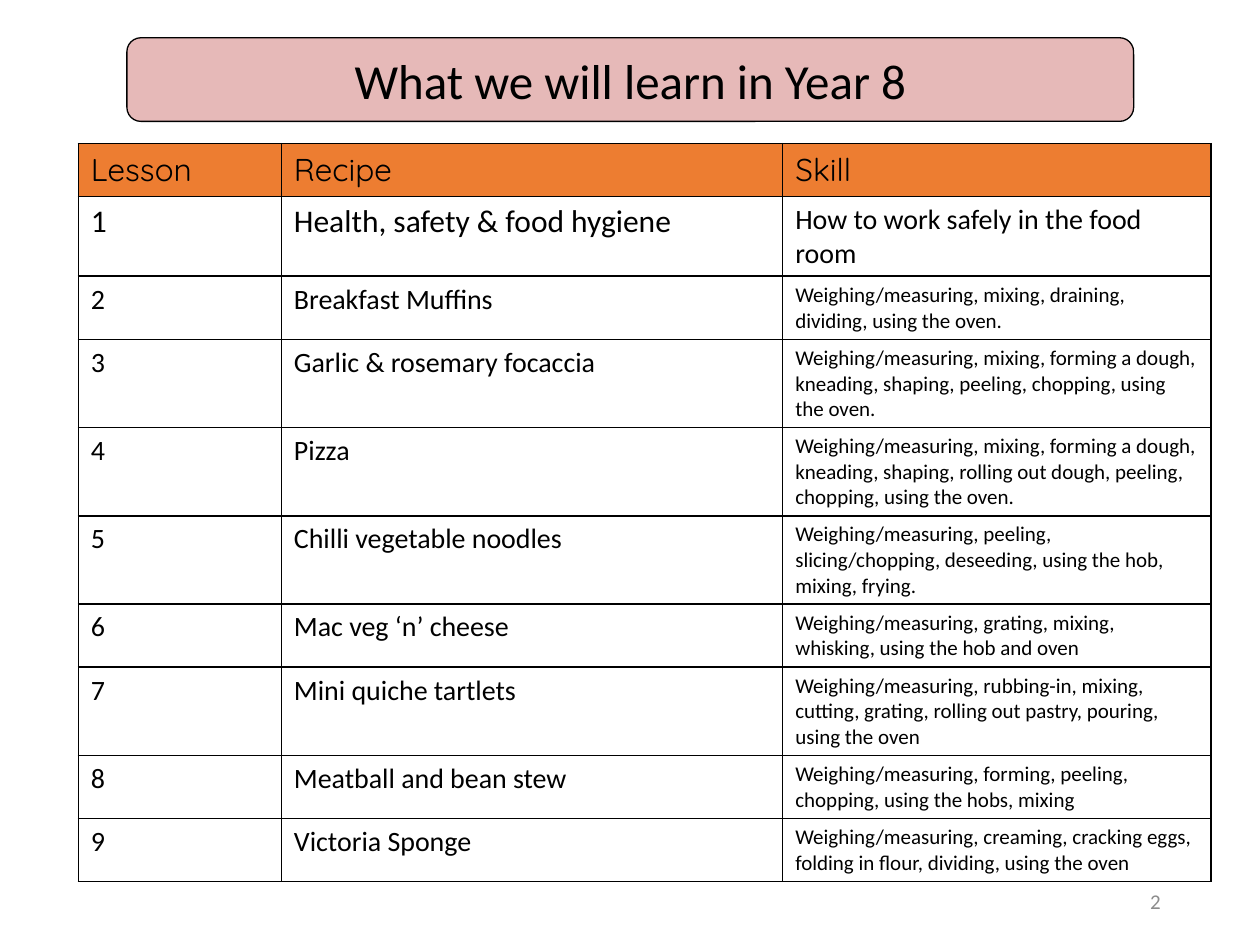
from typing import Any, NamedTuple

from lxml import etree
from pptx import Presentation
from pptx import util as u
from pptx.dml.color import RGBColor
from pptx.enum import shapes, text
from pptx.oxml import ns

COLOURS = {
    "ink": "000000",
    "title": "E6B9B8",
    "header": "ED7D31",
    "number": "8C8C8C",
}
BODY_FONT = "Calibri"
HEADER_FONT = "Quicksand"


class Lesson(NamedTuple):
    recipe: str
    skill: str
    size: int = 16
    skill_size: int = 12


class Box(NamedTuple):
    left: float
    top: float
    width: float
    height: float

    def lengths(self) -> list[u.Length]:
        return [u.Pt(value) for value in self]


HEADINGS = ("Lesson", "Recipe", "Skill")
COLUMN_WIDTHS = (116, 286.5, 244.8)
ROW_HEIGHT = 30.24
LESSONS = (
    Lesson("Health, safety & food hygiene", "How to work safely in the food room", 18, 16),
    Lesson("Breakfast Muffins", "Weighing/measuring, mixing, draining, dividing, using the oven."),
    Lesson("Garlic & rosemary focaccia",
           "Weighing/measuring, mixing, forming a dough, kneading, shaping, peeling, "
           "chopping, using the oven."),
    Lesson("Pizza",
           "Weighing/measuring, mixing, forming a dough, kneading, shaping, "
           "rolling out dough, peeling, chopping, using the oven."),
    Lesson("Chilli vegetable noodles",
           "Weighing/measuring, peeling, slicing/chopping, deseeding, using the hob, "
           "mixing, frying."),
    Lesson("Mac veg ‘n’ cheese",
           "Weighing/measuring, grating, mixing, whisking, using the hob and oven"),
    Lesson("Mini quiche tartlets",
           "Weighing/measuring, rubbing-in, mixing, cutting, grating, "
           "rolling out pastry, pouring, using the oven"),
    Lesson("Meatball and bean stew",
           "Weighing/measuring, forming, peeling, chopping, using the hobs, mixing"),
    Lesson("Victoria Sponge",
           "Weighing/measuring, creaming, cracking eggs, folding in flour, dividing, "
           "using the oven"),
)


def colour(name: str) -> RGBColor:
    return RGBColor.from_string(COLOURS[name])


def set_values(target: Any, values: dict[str, Any]) -> None:
    for name, value in values.items():
        setattr(target, name, value)


def write(frame: Any, words: str, size: float, font: str = BODY_FONT,
          ink: str = "ink", align: Any = text.PP_ALIGN.LEFT) -> None:
    para = frame.paragraphs[0]
    para.alignment = align
    span = para.add_run()
    span.text = words
    set_values(span.font, {"size": u.Pt(size), "name": font})
    span.font.color.rgb = colour(ink)


def add_borders(cell: Any) -> None:
    properties = cell._tc.get_or_add_tcPr()
    for side in ("lnL", "lnR", "lnT", "lnB"):
        line = etree.SubElement(properties, ns.qn(f"a:{side}"), w=str(u.Pt(1)))
        fill = etree.SubElement(line, ns.qn("a:solidFill"))
        etree.SubElement(fill, ns.qn("a:srgbClr"), val=COLOURS["ink"])


def add_title(page: Any, box: Box) -> None:
    title = page.shapes.add_shape(shapes.MSO_SHAPE.ROUNDED_RECTANGLE, *box.lengths())
    title.shadow.inherit = False
    title.fill.solid()
    title.fill.fore_color.rgb = colour("title")
    title.line.color.rgb = colour("ink")
    title.line.width = u.Pt(0.75)
    margins = ("margin_left", "margin_top", "margin_right", "margin_bottom")
    set_values(title.text_frame, dict.fromkeys(margins, u.Pt(3)))
    set_values(title.text_frame,
               {"word_wrap": True, "vertical_anchor": text.MSO_ANCHOR.MIDDLE})
    write(title.text_frame, "What we will learn in Year 8", 28, align=text.PP_ALIGN.CENTER)


def add_lessons(page: Any, left: float, top: float) -> None:
    row_count = len(LESSONS) + 1
    box = Box(left, top, sum(COLUMN_WIDTHS), row_count * ROW_HEIGHT)
    table = page.shapes.add_table(row_count, len(HEADINGS), *box.lengths()).table
    set_values(table, {"first_row": False, "horz_banding": False})
    for column, width in zip(table.columns, COLUMN_WIDTHS):
        column.width = u.Pt(width)
    for cell in table.iter_cells():
        add_borders(cell)

    # Header row
    for column, heading in enumerate(HEADINGS):
        cell = table.cell(0, column)
        cell.fill.solid()
        cell.fill.fore_color.rgb = colour("header")
        write(cell.text_frame, heading, 18, HEADER_FONT)

    # One row per lesson
    for number, lesson in enumerate(LESSONS, start=1):
        entries = ((str(number), lesson.size), (lesson.recipe, lesson.size),
                   (lesson.skill, lesson.skill_size))
        for column, (words, size) in enumerate(entries):
            cell = table.cell(number, column)
            cell.fill.background()
            write(cell.text_frame, words, size)


def add_page_number(page: Any, box: Box) -> None:
    frame = page.shapes.add_textbox(*box.lengths()).text_frame
    set_values(frame, {"word_wrap": True, "vertical_anchor": text.MSO_ANCHOR.MIDDLE})
    write(frame, "2", 12, ink="number", align=text.PP_ALIGN.RIGHT)


def main() -> None:
    deck = Presentation()
    set_values(deck, {"slide_width": u.Pt(720), "slide_height": u.Pt(540)})
    page = deck.slides.add_slide(deck.slide_layouts[6])
    add_page_number(page, Box(508.3, 500.4, 162, 28.8))
    add_title(page, Box(72.5, 21.6, 575.3, 47.8))
    add_lessons(page, 44.8, 82)
    deck.save("out.pptx")


if __name__ == "__main__":
    main()
